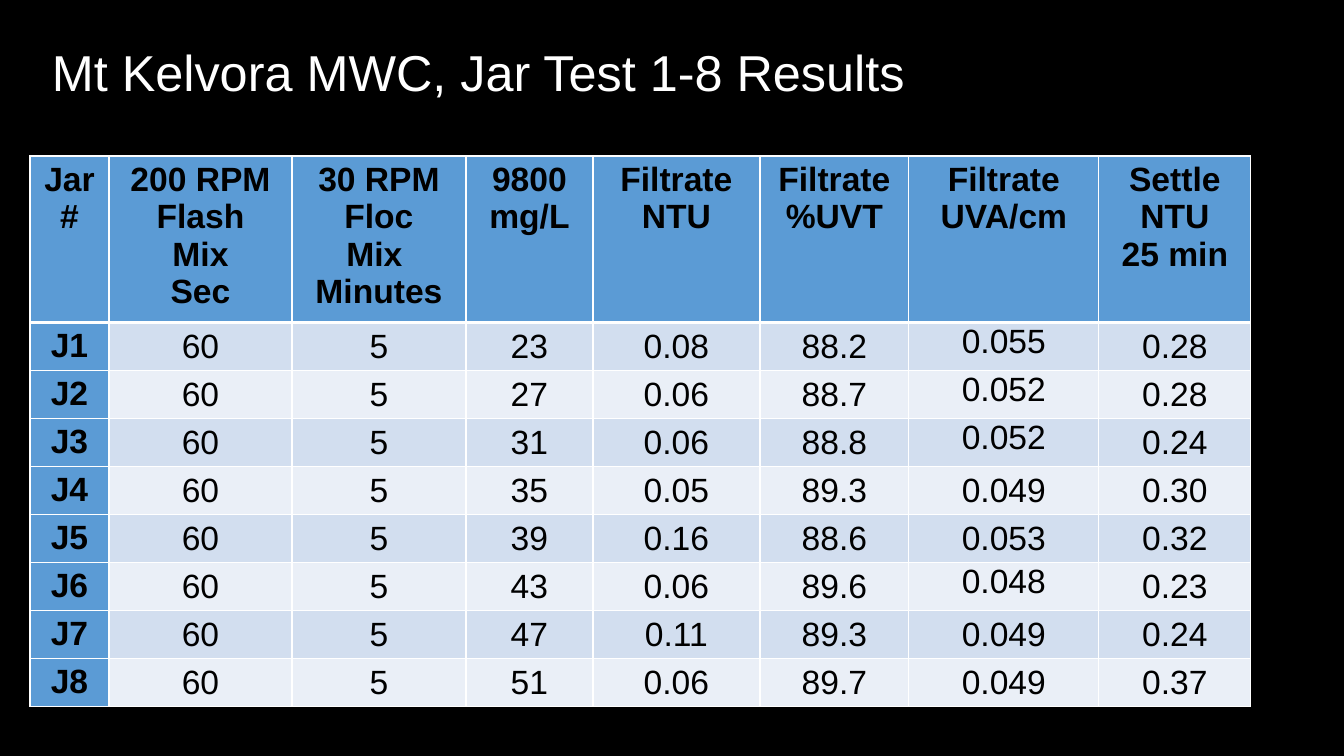
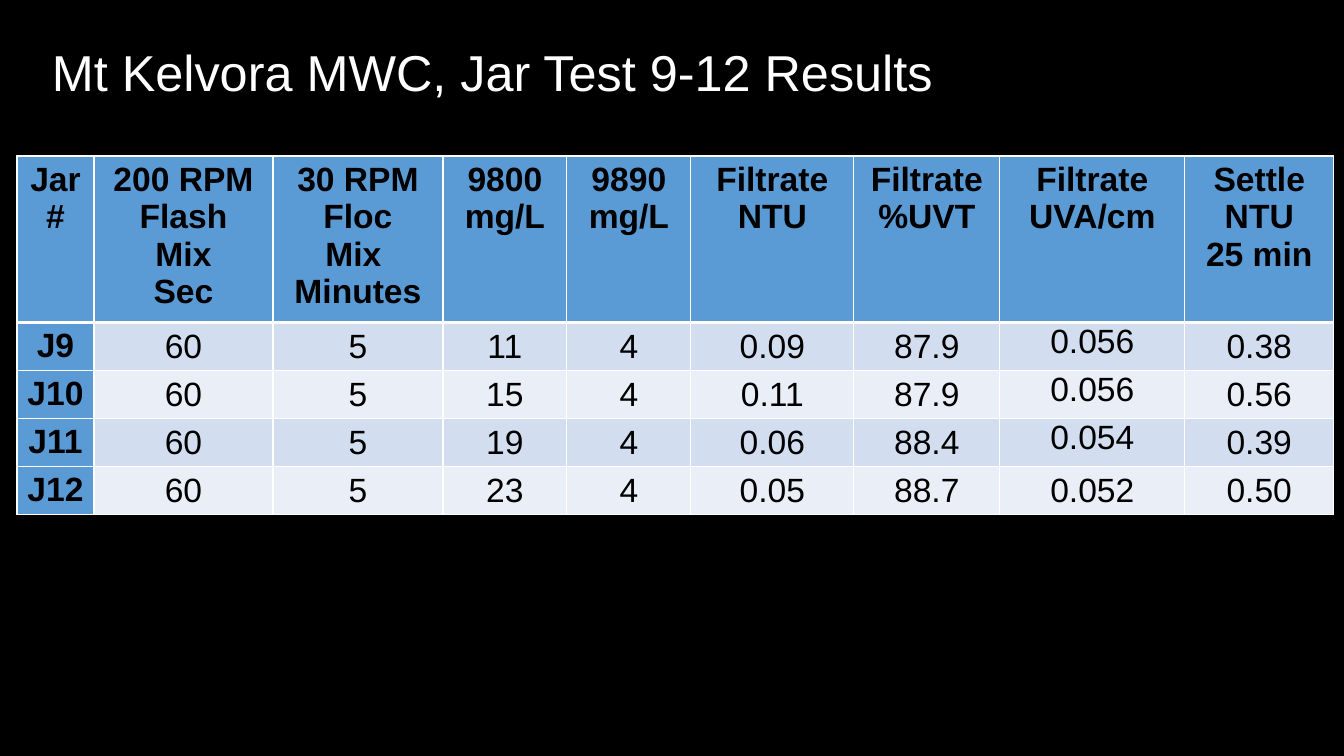
from lxml.etree import SubElement
from pptx import Presentation
from pptx.dml.color import RGBColor
from pptx.enum.text import MSO_ANCHOR as ANCHOR, PP_ALIGN as ALIGN
from pptx.oxml.ns import qn
from pptx.util import Pt

SLIDE_W, SLIDE_H = 1344, 756
EMU_PER_PX = 12192000 / SLIDE_W
FONT = "Arial"
BLACK, WHITE = "000000", "FFFFFF"
HEADER_FILL = "5B9BD5"
BANDS = ("D2DEEF", "EAEFF7")
TABLE_TOP, HEADER_H, ROW_H = 156, 159, 48
FLASH_SECONDS, FLOC_MINUTES = "60", "5"

UTILITY = "Mt Kelvora MWC"
JAR = "Jar\v#"
MIXING = ["200 RPM\nFlash\nMix\nSec", "30 RPM\nFloc\nMix \nMinutes"]
DOSE_9800, DOSE_9890 = "9800\nmg/L", "9890\nmg/L"
UVA = "Filtrate\nUVA/cm"
OUTCOMES = ["Filtrate\nNTU", "Filtrate\n%UVT", UVA, "Settle\nNTU\n25 min"]
RAISED_UVA_JARS = {"J1", "J2", "J3", "J6", "J9", "J10", "J11"}

RESULT_SLIDES = [
    {
        "title": f"{UTILITY}, Jar Test 1-8 Results",
        "left": 30,
        "widths": [79, 183, 174, 127, 167, 149, 190, 152],
        "headings": [JAR, *MIXING, DOSE_9800, *OUTCOMES],
        "first_jar": 1,
        "readings": [
            ("23", "0.08", "88.2", "0.055", "0.28"),
            ("27", "0.06", "88.7", "0.052", "0.28"),
            ("31", "0.06", "88.8", "0.052", "0.24"),
            ("35", "0.05", "89.3", "0.049", "0.30"),
            ("39", "0.16", "88.6", "0.053", "0.32"),
            ("43", "0.06", "89.6", "0.048", "0.23"),
            ("47", "0.11", "89.3", "0.049", "0.24"),
            ("51", "0.06", "89.7", "0.049", "0.37"),
        ],
    },
    {
        "title": f"{UTILITY}, Jar Test 9-12 Results",
        "left": 17,
        "widths": [77, 179, 170, 124, 124, 163, 146, 185, 149],
        "headings": [JAR, *MIXING, DOSE_9800, DOSE_9890, *OUTCOMES],
        "first_jar": 9,
        "readings": [
            ("11", "4", "0.09", "87.9", "0.056", "0.38"),
            ("15", "4", "0.11", "87.9", "0.056", "0.56"),
            ("19", "4", "0.06", "88.4", "0.054", "0.39"),
            ("23", "4", "0.05", "88.7", "0.052", "0.50"),
        ],
    },
]


def px(length):
    """Turn pixels into EMU."""
    return round(length * EMU_PER_PX)


def color(value):
    """Turn a hex string into a colour."""
    return RGBColor.from_string(value)


def style_runs(paragraph, size, ink, bold=False):
    """Format every run of a paragraph."""
    for run in paragraph.runs:
        run.font.name = FONT
        run.font.size = Pt(size)
        run.font.bold = bold
        run.font.color.rgb = color(ink)


def add_title(slide, wording):
    """Add the slide title."""
    frame = slide.shapes.add_textbox(px(42), px(11), px(1209), px(128)).text_frame
    frame.word_wrap = True
    frame.vertical_anchor = ANCHOR.MIDDLE
    frame.text = wording
    heading = frame.paragraphs[0]
    heading.line_spacing = 0.9
    style_runs(heading, 36, WHITE)


def set_borders(cell, top, bottom):
    """Draw white borders with the given top and bottom widths in points."""
    properties = cell._tc.get_or_add_tcPr()
    for side, width in (("L", 1), ("R", 1), ("T", top), ("B", bottom)):
        line = SubElement(properties, qn(f"a:ln{side}"), w=str(Pt(width)))
        fill = SubElement(line, qn("a:solidFill"))
        SubElement(fill, qn("a:srgbClr"), val=WHITE)


def fill_cell(cell, wording, fill, bold, top=1, bottom=1):
    """Write and colour one table cell."""
    set_borders(cell, top, bottom)
    cell.fill.solid()
    cell.fill.fore_color.rgb = color(fill)
    cell.margin_bottom = 0
    cell.text_frame.text = wording
    for paragraph in cell.text_frame.paragraphs:
        paragraph.alignment = ALIGN.CENTER
        style_runs(paragraph, 24, BLACK, bold)


def tighten(cell, anchor):
    """Give a reading cell thin margins and a vertical anchor."""
    cell.margin_left = cell.margin_right = cell.margin_top = px(1)
    cell.vertical_anchor = anchor


def add_results(slide, left, widths, headings, first_jar, readings):
    """Add the table of jar test results."""
    height = HEADER_H + ROW_H * len(readings)
    table = slide.shapes.add_table(
        len(readings) + 1, len(headings),
        px(left), px(TABLE_TOP), px(sum(widths)), px(height),
    ).table
    for column, width in zip(table.columns, widths):
        column.width = px(width)
    for index, row in enumerate(table.rows):
        row.height = px(ROW_H if index else HEADER_H)
    for column, heading in enumerate(headings):
        fill_cell(table.cell(0, column), heading, HEADER_FILL, True, bottom=3)
    for index, reading in enumerate(readings):
        jar = f"J{first_jar + index}"
        top = 1 if index else 3
        fill_cell(table.cell(index + 1, 0), jar, HEADER_FILL, True, top)
        values = (FLASH_SECONDS, FLOC_MINUTES, *reading)
        for column, value in enumerate(values, start=1):
            cell = table.cell(index + 1, column)
            fill_cell(cell, value, BANDS[index % 2], False, top)
            raised = headings[column] == UVA and jar in RAISED_UVA_JARS
            tighten(cell, ANCHOR.TOP if raised else ANCHOR.MIDDLE)


def add_result_slide(deck, title, **results):
    """Add a black slide with a title and its results."""
    slide = deck.slides.add_slide(deck.slide_layouts[6])
    background = slide.background.fill
    background.solid()
    background.fore_color.rgb = color(BLACK)
    add_title(slide, title)
    add_results(slide, **results)


def main():
    """Build and save the deck."""
    deck = Presentation()
    deck.slide_width, deck.slide_height = px(SLIDE_W), px(SLIDE_H)
    for content in RESULT_SLIDES:
        add_result_slide(deck, **content)
    deck.save("out.pptx")


if __name__ == "__main__":
    main()
